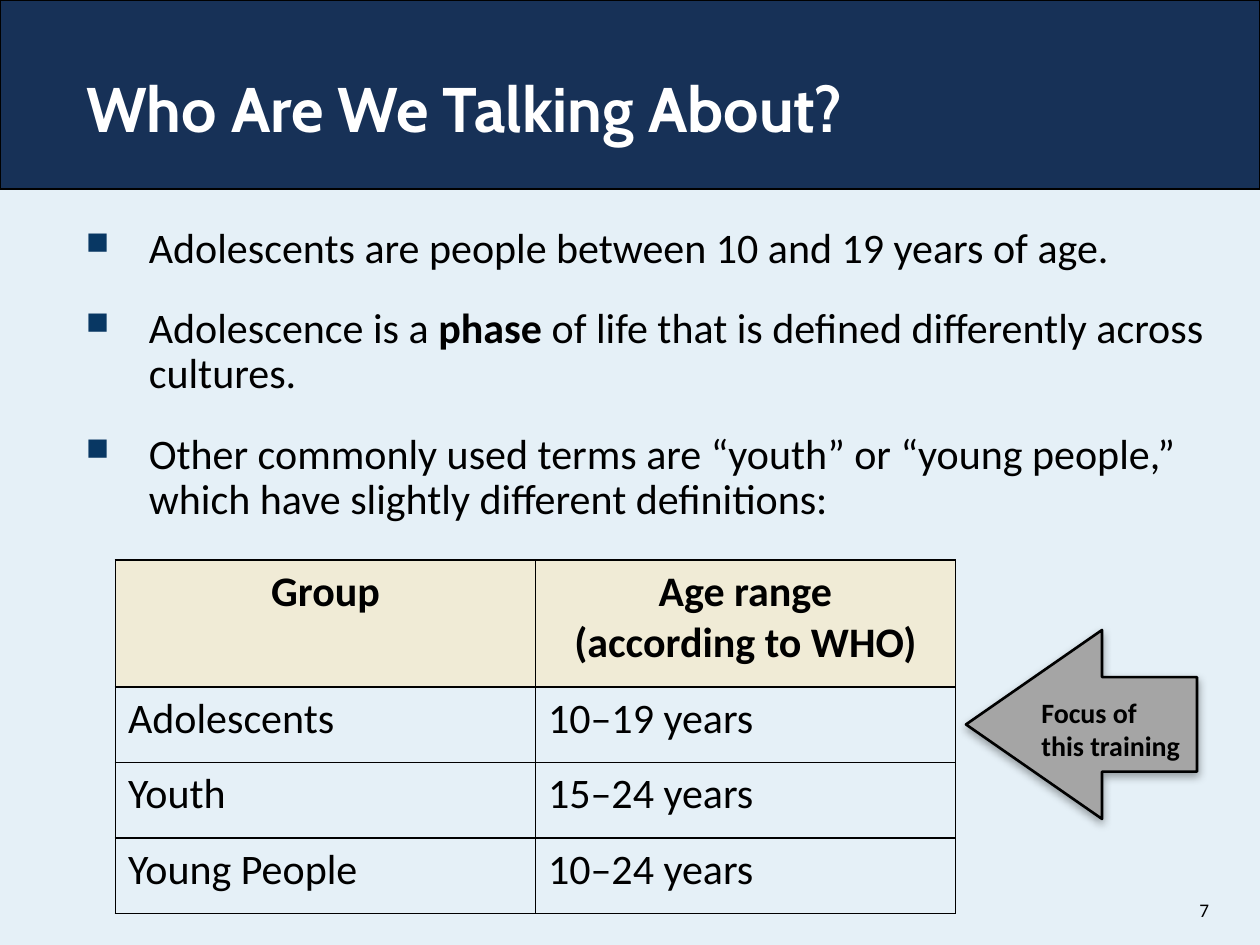
from lxml import etree
from pptx import Presentation
from pptx import util as u
from pptx.dml import color
from pptx.enum import shapes, text
from pptx.oxml import ns, parse_xml

Pt = u.Pt
COLORS = {"page": "E5F0F7", "banner": "173157", "ink": "000000", "white": "FFFFFF",
          "bullet": "083763", "header": "F0EBD6", "arrow": "A5A5A5"}
A = "http://schemas.openxmlformats.org/drawingml/2006/main"


def rgb(name):
    return color.RGBColor.from_string(COLORS[name])


class Deck:
    font = "Calibri"
    size = 24

    def __init__(self):
        self.presentation = Presentation()
        self.presentation.slide_width, self.presentation.slide_height = Pt(720), Pt(540)
        self.slide = self.presentation.slides.add_slide(self.presentation.slide_layouts[5])
        background = self.slide.background.fill
        background.solid()
        background.fore_color.rgb = rgb("page")

    def add_words(self, paragraph, words, size=None, bold=False, ink="ink", font=None):
        run = paragraph.add_run()
        run.text = words
        run.font.name = font or self.font
        run.font.size = Pt(size or self.size)
        run.font.bold = bold
        run.font.color.rgb = rgb(ink)

    def shape(self, parent, kind, box, fill, width):
        shape = parent.add_shape(kind, *map(Pt, box))
        shape.shadow.inherit = False
        shape.fill.solid()
        shape.fill.fore_color.rgb = rgb(fill)
        shape.line.color.rgb = rgb("ink")
        shape.line.width = Pt(width)
        return shape

    def text_frame(self, parent, box, inset=None):
        frame = parent.add_textbox(*map(Pt, box)).text_frame
        frame.word_wrap = True
        if inset is not None:
            frame.margin_left = frame.margin_right = Pt(inset)
            frame.margin_top = frame.margin_bottom = Pt(inset)
        return frame

    def banner(self, box):
        banner = self.shape(self.slide.shapes, shapes.MSO_SHAPE.RECTANGLE, box, "banner", 0.75)
        self.slide.shapes._spTree.insert(2, banner._element)

    def title(self, box, words):
        title = self.slide.shapes.title
        title.left, title.top, title.width, title.height = map(Pt, box)
        frame = title.text_frame
        frame.auto_size = text.MSO_AUTO_SIZE.NONE
        frame.vertical_anchor = text.MSO_ANCHOR.TOP
        frame.paragraphs[0].alignment = text.PP_ALIGN.LEFT
        self.add_words(frame.paragraphs[0], words, 36, True, "white", "Cabin")

    def bullets(self, box, points):
        frame = self.text_frame(self.slide.shapes, box)
        for index, point in enumerate(points):
            paragraph = frame.add_paragraph() if index else frame.paragraphs[0]
            paragraph.line_spacing = 0.9
            paragraph.space_before = Pt(20)
            properties = paragraph._p.get_or_add_pPr()
            properties.set("marL", str(Pt(36)))
            properties.set("indent", str(-Pt(36)))
            bullet_color = etree.SubElement(properties, ns.qn("a:buClr"))
            etree.SubElement(bullet_color, ns.qn("a:srgbClr"), val=COLORS["bullet"])
            etree.SubElement(properties, ns.qn("a:buSzPct"), val="75000")
            etree.SubElement(properties, ns.qn("a:buChar"), char="■")
            for words, bold in point:
                self.add_words(paragraph, words, bold=bold)

    def cell(self, cell, words, header):
        properties = cell._tc.get_or_add_tcPr()
        for side in "LRTB":
            properties.append(parse_xml(
                f'<a:ln{side} xmlns:a="{A}" w="{Pt(1)}"><a:solidFill>'
                f'<a:srgbClr val="{COLORS["ink"]}"/></a:solidFill></a:ln{side}>'))
        if header:
            cell.fill.solid()
            cell.fill.fore_color.rgb = rgb("header")
        else:
            cell.fill.background()
        paragraph = cell.text_frame.paragraphs[0]
        paragraph.space_before = Pt(20)
        paragraph.alignment = text.PP_ALIGN.CENTER if header else text.PP_ALIGN.LEFT
        for index, line in enumerate(words.split("\n")):
            if index:
                paragraph.add_line_break()
            self.add_words(paragraph, line, bold=header)

    def table(self, box, heights, rows):
        table = self.slide.shapes.add_table(len(rows), len(rows[0]), *map(Pt, box)).table
        for row, height in enumerate(heights):
            table.rows[row].height = Pt(height)
            for column, words in enumerate(rows[row]):
                self.cell(table.cell(row, column), words, row == 0)

    def callout(self, arrow_box, label_box, words):
        parts = self.slide.shapes.add_group_shape().shapes
        arrow = self.shape(parts, shapes.MSO_SHAPE.LEFT_ARROW, arrow_box, "arrow", 1.5)
        arrow.adjustments[0], arrow.adjustments[1] = 0.5, 0.72
        effects = arrow._element.spPr.find(ns.qn("a:effectLst"))
        effects.append(parse_xml(
            f'<a:outerShdw xmlns:a="{A}" blurRad="{Pt(5)}" dist="{Pt(2.1)}" dir="5400000" '
            f'rotWithShape="0"><a:srgbClr val="{COLORS["ink"]}"><a:alpha val="35000"/>'
            '</a:srgbClr></a:outerShdw>'))
        label = self.text_frame(parts, label_box, 7.2)
        self.add_words(label.paragraphs[0], words, 16, True)

    def page_number(self, box, number):
        frame = self.text_frame(self.slide.shapes, box)
        frame.vertical_anchor = text.MSO_ANCHOR.MIDDLE
        frame.paragraphs[0].alignment = text.PP_ALIGN.RIGHT
        self.add_words(frame.paragraphs[0], number, 11)


def main():
    deck = Deck()
    deck.banner((0, 0, 720, 108))
    deck.title((42, 36, 678, 90), "Who\u00a0Are We Talking About?".replace("\u00a0", " "))
    deck.bullets((42, 126, 654, 126), [
        [("Adolescents are people between 10 and 19 years of age.", False)],
        [("Adolescence is a ", False), ("phase", True),
         (" of life that is defined differently across cultures.", False)],
        [("Other commonly used terms are “youth” or “young people,” "
          "which have slightly different definitions:", False)],
    ])
    deck.table((66, 320, 480, 202), (72.7, 43.1, 43.1, 43.1), [
        ("Group", "Age range\n(according to WHO)"),
        ("Adolescents", "10–19 years"),
        ("Youth", "15–24 years"),
        ("Young People", "10–24 years"),
    ])
    deck.callout((552, 360, 132, 108), (588, 390, 96, 40), "Focus of this training")
    deck.page_number((654, 505.5, 44, 29), "7")
    deck.presentation.save("out.pptx")


if __name__ == "__main__":
    main()
